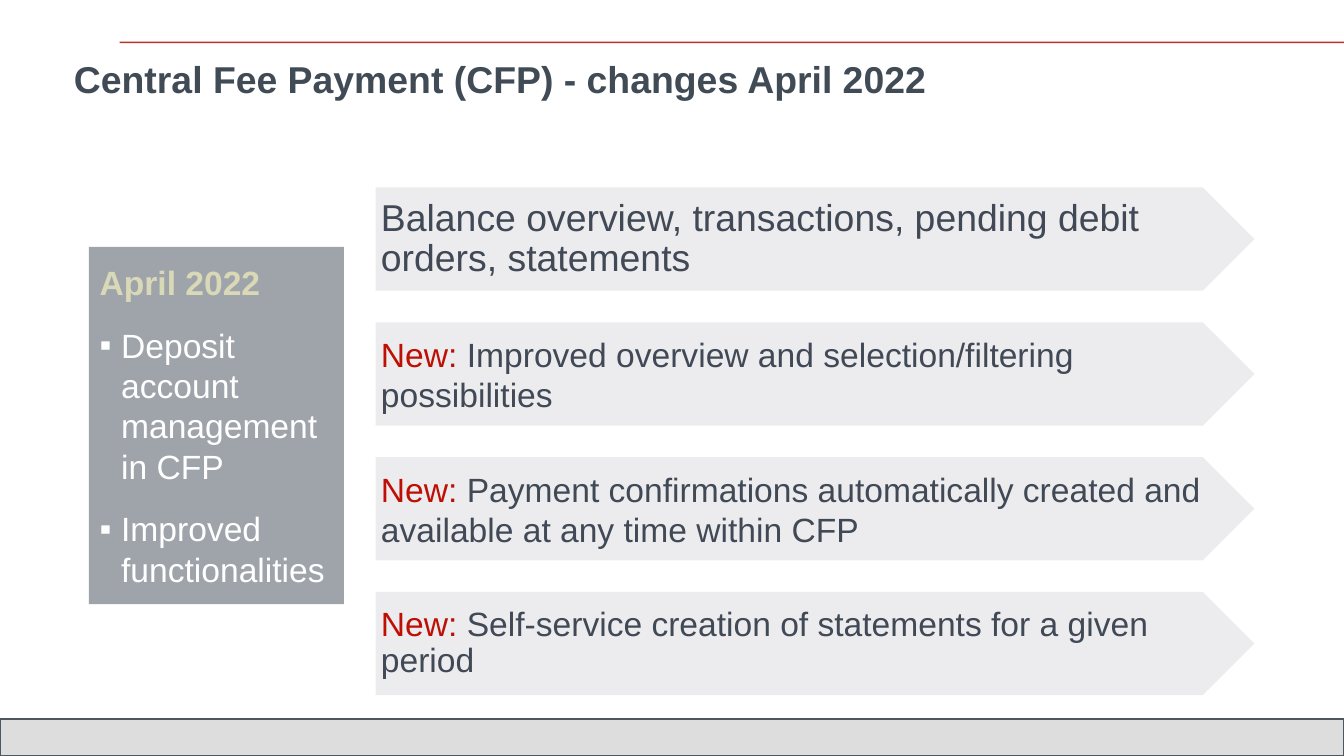
from dataclasses import dataclass

from lxml.etree import SubElement
from pptx import Presentation
from pptx.dml.color import RGBColor as RGB
from pptx.enum.shapes import MSO_SHAPE as SHAPE
from pptx.enum.text import MSO_ANCHOR as ANCHOR, PP_ALIGN as ALIGN
from pptx.oxml.ns import qn
from pptx.util import Pt


@dataclass(frozen=True)
class Theme:
    font: str = "Arial"
    heading_size: float = 20
    body_size: float = 18
    heading: str = "404B56"
    body: str = "404955"
    highlight: str = "BE0F05"
    rule: str = "C03127"
    footer: str = "DDDDDD"
    footer_line: str = "4C575F"
    arrow: str = "ECECEE"
    panel: str = "9FA4AA"
    panel_heading: str = "D9D9B7"
    panel_text: str = "FFFFFF"


class SlideBuilder:
    def __init__(self, slide, theme):
        self.slide = slide
        self.theme = theme

    def style(self, paragraph, size, color, bold=False):
        font = paragraph.font
        font.name, font.size, font.bold = self.theme.font, Pt(size), bold
        font.color.rgb = RGB.from_string(color)
        paragraph.alignment = ALIGN.LEFT

    def frame(self, shape, side, edge):
        frame = shape.text_frame
        frame.word_wrap = True
        frame.vertical_anchor = ANCHOR.MIDDLE
        frame.margin_left = frame.margin_right = Pt(side)
        frame.margin_top = frame.margin_bottom = Pt(edge)
        return frame

    def block(self, kind, box, fill, line=None):
        shape = self.slide.shapes.add_shape(kind, *map(Pt, box))
        shape.shadow.inherit = False
        shape.fill.solid()
        shape.fill.fore_color.rgb = RGB.from_string(fill)
        if line:
            shape.line.color.rgb = RGB.from_string(line)
            shape.line.width = Pt(0.75)
        else:
            shape.line.fill.background()
        return shape

    def title(self, text, box):
        title = self.slide.shapes.title
        title.left, title.top, title.width, title.height = map(Pt, box)
        frame = self.frame(title, 7.2, 3.6)
        frame.text = text
        self.style(frame.paragraphs[0], self.theme.heading_size, self.theme.heading, True)

    def arrow(self, box, label, text, size, tight):
        shape = self.block(SHAPE.PENTAGON, box, self.theme.arrow)
        paragraph = self.frame(shape, 2.9, 2.9).paragraphs[0]
        if tight:
            paragraph.line_spacing = 0.9
            paragraph.space_after = Pt(0.35 * size)
        self.style(paragraph, size, self.theme.body)
        if label:
            run = paragraph.add_run()
            run.text = label
            run.font.color.rgb = RGB.from_string(self.theme.highlight)
        paragraph.add_run().text = text

    def panel(self, box, heading, points):
        shape = self.block(SHAPE.RECTANGLE, box, self.theme.panel)
        frame = self.frame(shape, 5.8, 3.6)
        frame.text = "\n".join([heading, *points])
        first, *rest = frame.paragraphs
        first.space_after = Pt(12)
        self.style(first, self.theme.body_size, self.theme.panel_heading, True)
        for paragraph in rest:
            paragraph.space_after = Pt(12)
            properties = paragraph._p.get_or_add_pPr()
            indent = Pt(11.5)
            properties.set("marL", str(indent))
            properties.set("indent", str(-indent))
            SubElement(properties, qn("a:buFont"), typeface=self.theme.font)
            SubElement(properties, qn("a:buChar"), char="▪")
            self.style(paragraph, self.theme.body_size, self.theme.panel_text)


def main():
    theme = Theme()
    deck = Presentation()
    deck.slide_width, deck.slide_height = Pt(720), Pt(405)
    builder = SlideBuilder(deck.slides.add_slide(deck.slide_layouts[5]), theme)

    builder.block(SHAPE.RECTANGLE, (0, 385.3, 720, 19.5), theme.footer, theme.footer_line)
    builder.block(SHAPE.RECTANGLE, (64.1, 22.3, 655.9, 0.8), theme.rule)
    builder.title("Central Fee Payment (CFP) - changes April 2022", (32.4, 26, 618, 32))

    changes = [
        ("", "Balance overview, transactions, pending debit orders, statements",
         theme.heading_size, True),
        ("New: ", "Improved overview and selection/filtering possibilities",
         theme.body_size, False),
        ("New: ", "Payment confirmations automatically created and available at any time within CFP",
         theme.body_size, False),
        ("New: ", "Self-service creation of statements for a given period",
         theme.body_size, True),
    ]
    for row, change in enumerate(changes):
        builder.arrow((201.2, 100.4 + 72.25 * row, 470.8, 55.3), *change)

    builder.panel((47.6, 132.3, 136.6, 191.4), "April 2022",
                  ["Deposit account management in CFP", "Improved functionalities"])
    deck.save("out.pptx")


if __name__ == "__main__":
    main()
